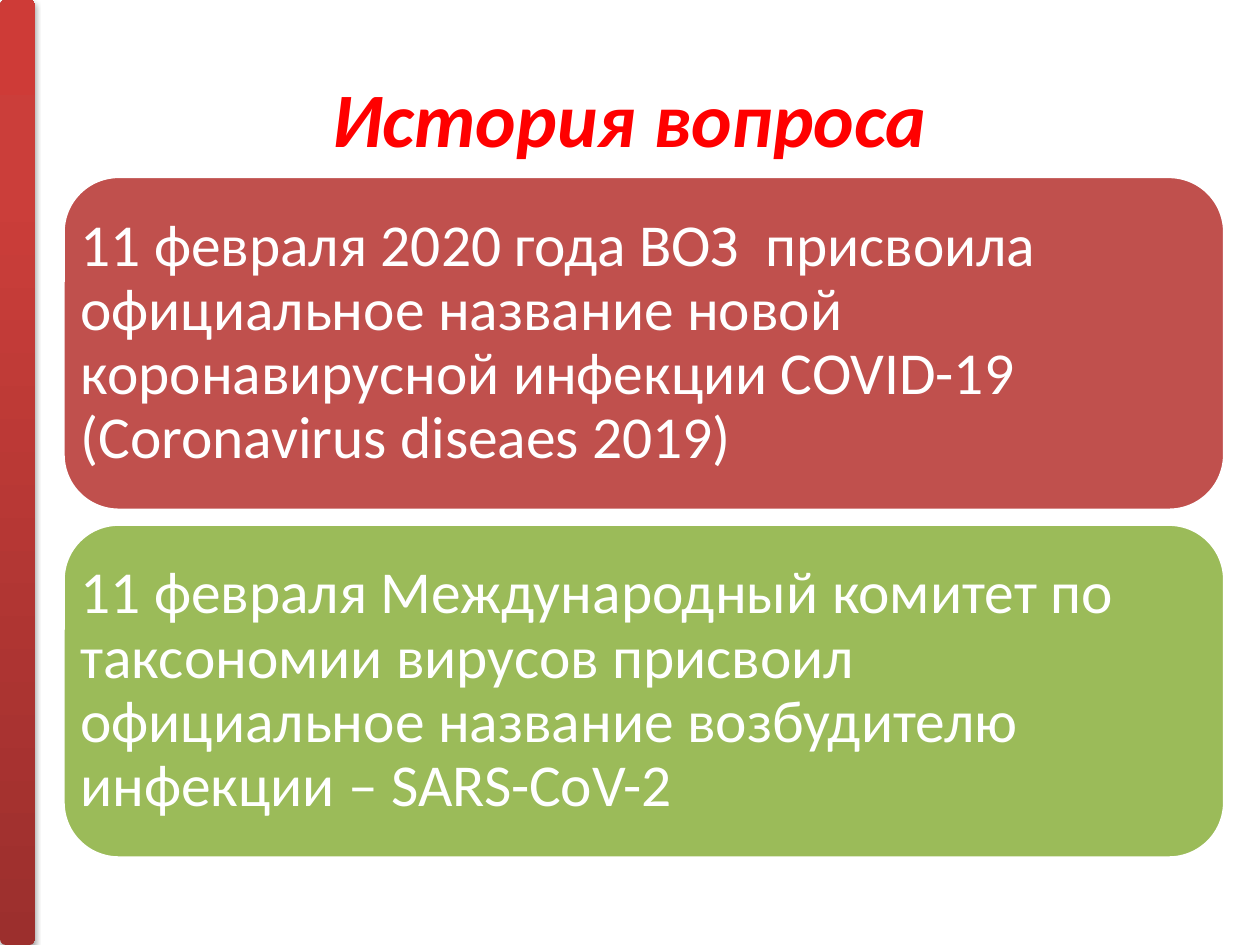
from copy import deepcopy

from lxml import etree
from pptx import Presentation
from pptx.dml.color import RGBColor
from pptx.enum.shapes import MSO_SHAPE
from pptx.enum.text import MSO_ANCHOR, PP_ALIGN
from pptx.util import Inches, Pt

ROUND = MSO_SHAPE.ROUNDED_RECTANGLE
MIDDLE = MSO_ANCHOR.MIDDLE
LEFT, CENTER = PP_ALIGN.LEFT, PP_ALIGN.CENTER
FONT = "Calibri"
STOPS = [(0, "9C2F2D"), (0.8, "CB3E3A"), (1, "CE3B37")]
SHADOW = """<a:effectLst xmlns:a="http://schemas.openxmlformats.org/drawingml/2006/main">
<a:outerShdw blurRad="39370" dist="22860" dir="5400000" rotWithShape="0">
<a:srgbClr val="000000"><a:alpha val="35000"/></a:srgbClr>
</a:outerShdw></a:effectLst>"""
CARDS = [
    ("C0504D", "11 февраля 2020 года ВОЗ  присвоила официальное название новой "
               "коронавирусной инфекции COVID-19 (Coronavirus diseaes 2019)"),
    ("9BBB59", "11 февраля Международный комитет по таксономии вирусов присвоил "
               "официальное название возбудителю инфекции – SARS-CoV-2"),
]


def paint(color, value):
    """Set a colour from a hex string."""
    color.rgb = RGBColor.from_string(value)


def write(shape, text, size, color, align, bold=False):
    """Put one formatted paragraph, centred in height, into a shape."""
    frame = shape.text_frame
    frame.word_wrap = True
    frame.vertical_anchor = MIDDLE
    frame.text = text
    para = frame.paragraphs[0]
    para.alignment = align
    font = para.runs[0].font
    font.name, font.size = FONT, Pt(size)
    font.bold = font.italic = bold
    paint(font.color, color)
    return frame


def add_title(slide, box):
    """Place the title of the slide."""
    title = slide.shapes.title
    title.left, title.top, title.width, title.height = map(Inches, box)
    write(title, "История вопроса", 44, "FF0000", CENTER, True)


def add_bar(slide, box):
    """Draw the shaded red bar at the edge."""
    bar = slide.shapes.add_shape(ROUND, *map(Inches, box))
    bar.line.fill.background()
    bar.fill.gradient()
    bar.fill.gradient_angle = 90
    first = bar._element.spPr.xpath(".//a:gs")[0]
    first.addnext(deepcopy(first))
    for stop, (place, color) in zip(bar.fill.gradient_stops, STOPS):
        stop.position = place
        paint(stop.color, color)
    bar._element.spPr.append(etree.fromstring(SHADOW))


def add_card(slide, box, color, text):
    """Draw one rounded card with its text."""
    card = slide.shapes.add_shape(ROUND, *map(Inches, box))
    card.shadow.inherit = False
    card.fill.solid()
    paint(card.fill.fore_color, color)
    paint(card.line.color, "FFFFFF")
    card.line.width = Pt(2)
    frame = write(card, text, 34, "FFFFFF", LEFT)
    frame.margin_left = frame.margin_right = Inches(0.01)
    frame.margin_top = frame.margin_bottom = Inches(0.01)
    frame.paragraphs[0].line_spacing = 0.9


def add_cards(slide, box, gap):
    """Stack the cards evenly in the box."""
    left, top, width, height = box
    tall = (height - gap * (len(CARDS) - 1)) / len(CARDS)
    for row, (color, text) in enumerate(CARDS):
        place = (left, top + row * (tall + gap), width, tall)
        add_card(slide, place, color, text)


def main():
    """Build and save the slide."""
    deck = Presentation()
    deck.slide_width, deck.slide_height = Inches(10), Inches(7.5)
    slide = deck.slides.add_slide(deck.slide_layouts[5])
    add_title(slide, (0.5, 0.3, 9, 1.25))
    add_bar(slide, (0, 0, 0.28, 7.5))
    add_cards(slide, (0.5, 1.4, 9.22, 5.41), 0.11)
    deck.save("out.pptx")


if __name__ == "__main__":
    main()
